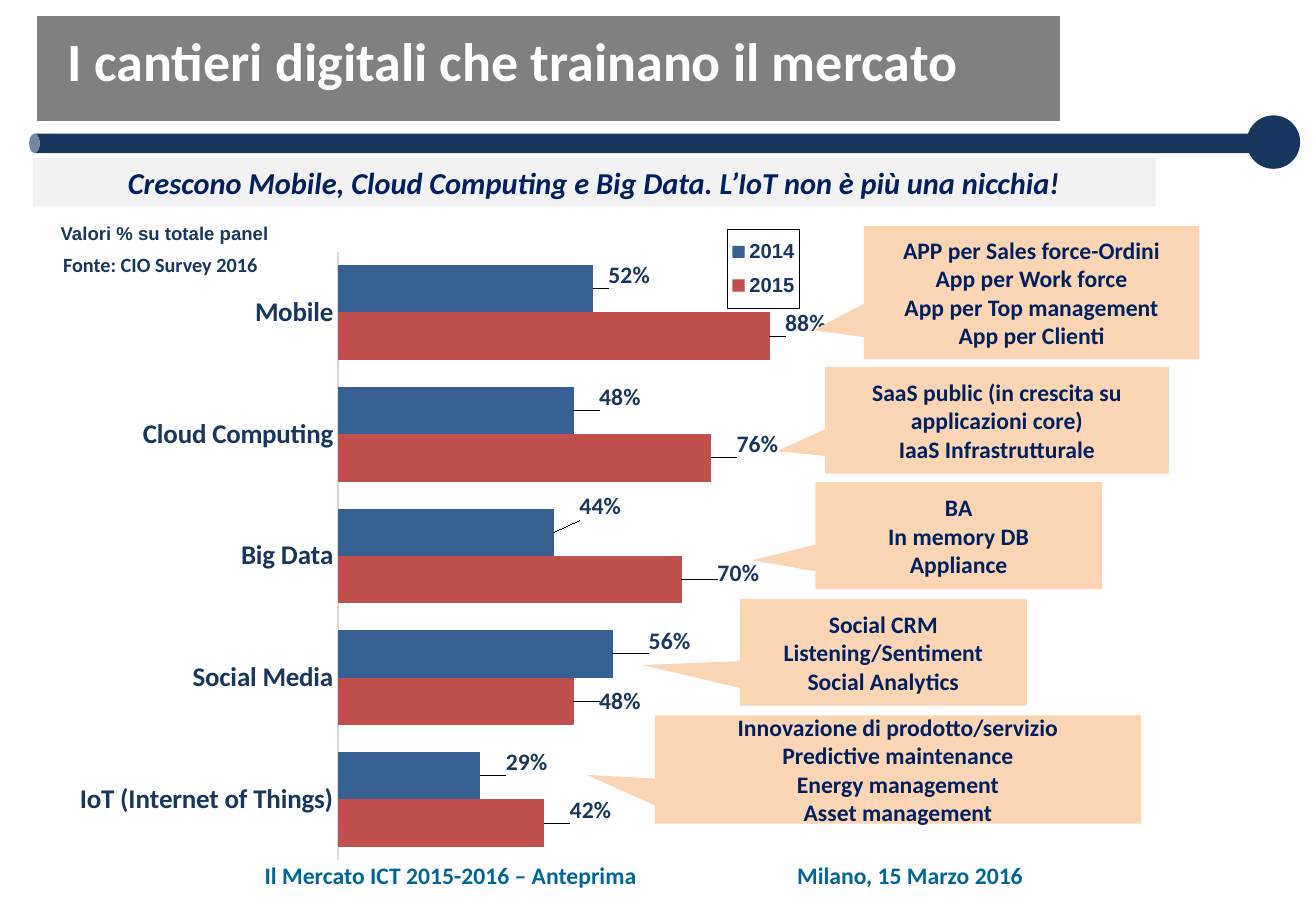
from lxml import etree
from pptx import Presentation
from pptx.chart.data import CategoryChartData
from pptx.dml.color import RGBColor
from pptx.enum import chart as ch, shapes, text
from pptx.oxml import parse_xml
from pptx.oxml.ns import nsdecls, qn
from pptx.util import Inches, Pt

C = {"navy": "17375E", "ink": "002060", "grey": "808080", "pale": "F2F2F2",
     "peach": "FCD5B5", "teal": "006699", "blue": "376092", "red": "C0504D",
     "axis": "D9D9D9", "white": "FFFFFF", "black": "000000"}
MSO, ALIGN = shapes.MSO_SHAPE, text.PP_ALIGN

prs = Presentation()
prs.slide_width, prs.slide_height = Inches(10.83), Inches(7.5)
s = prs.slides.add_slide(prs.slide_layouts[6])


def add_box(kind, at, fill=None, line=None):
    """Add a preset shape, or a text box when kind is None."""
    at = [Inches(v) for v in at]
    if kind is None:
        return s.shapes.add_textbox(*at)
    sp = s.shapes.add_shape(kind, *at)
    sp.shadow.inherit = False
    sp.fill.solid()
    sp.fill.fore_color.rgb = RGBColor.from_string(C[fill])
    if line:
        sp.line.color.rgb = RGBColor.from_string(C[line])
        sp.line.width = Pt(0.75)
    else:
        sp.line.fill.background()
    return sp


def write(sp, lines, size, color, font="Calibri", italic=None,
          align=ALIGN.CENTER, anchor=text.MSO_ANCHOR.TOP):
    tf = sp.text_frame
    tf.word_wrap = True
    tf.vertical_anchor = anchor
    for i, line in enumerate(lines):
        p = tf.add_paragraph() if i else tf.paragraphs[0]
        p.text, p.alignment = line, align
        p.font.size, p.font.name = Pt(size), font
        p.font.bold, p.font.italic = True, italic
        p.font.color.rgb = RGBColor.from_string(C[color])


# Header band and rule
bar = add_box(MSO.CAN, (5.21, -3.87, 0.16, 10.1), "navy")
bar.rotation = 270
bar.adjustments[0] = 0.55
add_box(MSO.RECTANGLE, (0.3, 0.13, 8.43, 0.87), "grey", "white")
add_box(MSO.OVAL, (10.26, 0.95, 0.44, 0.44), "navy")

# Footer
for at, line in [((1.88, 7.04, 3.66, 0.34), "Il Mercato ICT 2015-2016 – Anteprima"),
                 ((6.29, 7.04, 2.4, 0.34), "Milano, 15 Marzo 2016")]:
    write(add_box(None, at), [line], 14, "teal")

# Chart: values and label offsets (fractions of the chart) from bottom to top
SERIES = [
    ("2015", "red", (0.42, 0.48, 0.7, 0.76, 0.88),
     [(0.02, -0.02), (0.02, 0), (0.03, -0.01), (0.02, -0.02), (0.01, -0.02)]),
    ("2014", "blue", (0.29, 0.56, 0.44, 0.48, 0.52),
     [(0.02, -0.02), (0.03, -0.02), (0.02, -0.04), (0.02, -0.02), (0.01, -0.02)]),
]
data = CategoryChartData(number_format="0%")
data.categories = ["IoT (Internet of Things)", "Social Media", "Big Data",
                   "Cloud Computing", "Mobile"]
for name, _, values, _ in SERIES:
    data.add_series(name, values)
chart = s.shapes.add_chart(ch.XL_CHART_TYPE.BAR_CLUSTERED, Inches(-1.36), Inches(1.86),
                           Inches(8.54), Inches(5.43), data).chart
chart.has_title = False
chart.font.size, chart.font.name, chart.font.bold = Pt(12), "Arial", True
chart.font.color.rgb = RGBColor.from_string(C["navy"])

cat, val = chart.category_axis, chart.value_axis
cat.major_tick_mark = ch.XL_TICK_MARK.NONE
cat.tick_labels.font.size, cat.tick_labels.font.name = Pt(16), "Calibri"
cat.tick_labels.font.bold = True
cat.tick_labels.font.color.rgb = RGBColor.from_string(C["navy"])
cat.format.line.color.rgb = RGBColor.from_string(C["axis"])
cat.format.line.width = Pt(0.75)
val.minimum_scale, val.maximum_scale = 0, 1
val.has_major_gridlines = False
val.visible = False

plot = chart.plots[0]
plot.gap_width, plot.overlap, plot.vary_by_categories = 57, 0, False
for series, (_, color, _, offsets) in zip(plot.series, SERIES):
    series.format.fill.solid()
    series.format.fill.fore_color.rgb = RGBColor.from_string(C[color])
    labels = series.data_labels
    labels.show_value = True
    labels.number_format, labels.number_format_is_linked = "0%", False
    labels.position = ch.XL_LABEL_POSITION.OUTSIDE_END
    labels.font.size, labels.font.name, labels.font.bold = Pt(14), "Calibri", True
    labels.font.color.rgb = RGBColor.from_string(C["navy"])
    for i, (dx, dy) in enumerate(offsets):
        labels._element.insert(i, parse_xml(
            f'<c:dLbl {nsdecls("c")}><c:idx val="{i}"/><c:layout><c:manualLayout>'
            f'<c:x val="{dx}"/><c:y val="{dy}"/></c:manualLayout></c:layout>'
            '<c:dLblPos val="outEnd"/><c:showLegendKey val="0"/><c:showVal val="1"/>'
            '<c:showCatName val="0"/><c:showSerName val="0"/><c:showPercent val="0"/>'
            '<c:showBubbleSize val="0"/></c:dLbl>'))

# Fixed places for the plot area and the framed legend
chart.has_legend = True
chart.legend.position = ch.XL_LEGEND_POSITION.RIGHT
chart.legend.include_in_layout = False
legend = chart.legend._element
area = chart._chartSpace.find(".//" + qn("c:plotArea"))
for el, inner, place in [(area, True, (0.485, 0.039, 0.473, 0.923)),
                         (legend, False, (0.86, 0.005, 0.07, 0.12))]:
    for old in el.findall(qn("c:layout")):
        el.remove(old)
    layout = etree.Element(qn("c:layout"))
    manual = etree.SubElement(layout, qn("c:manualLayout"))
    items = [("layoutTarget", "inner")] if inner else []
    items += [("xMode", "edge"), ("yMode", "edge"), *zip("xywh", place)]
    for tag, value in items:
        etree.SubElement(manual, qn("c:" + tag)).set("val", str(value))
    el.insert(0 if inner else 1, layout)
legend.find(qn("c:overlay")).addnext(parse_xml(
    f'<c:spPr {nsdecls("c", "a")}><a:solidFill><a:srgbClr val="{C["white"]}"/></a:solidFill>'
    f'<a:ln w="9525"><a:solidFill><a:srgbClr val="{C["black"]}"/></a:solidFill></a:ln></c:spPr>'))

# Title, subtitle and notes on the data
title = add_box(None, (0.46, 0.36, 10.39, 0.63))
write(title, ["I cantieri digitali che trainano il mercato"], 32, "white", align=ALIGN.LEFT)
title.text_frame.paragraphs[0].line_spacing = Pt(25)
write(add_box(None, (0.33, 1.78, 2.05, 0.29)), ["Valori % su totale panel"], 11, "navy", "Arial")
write(add_box(MSO.RECTANGLE, (0.27, 1.3, 9.24, 0.4), "pale"),
      ["Crescono Mobile, Cloud Computing e Big Data. L’IoT non è più una nicchia!"],
      18, "ink", italic=True)
write(add_box(None, (0.06, 2.03, 2.52, 0.3)), ["Fonte: CIO Survey 2016"], 12, "navy")

# Callouts: place, pointer tip, lines
CALLOUTS = [
    ((7.11, 1.86, 2.76, 1.1), (-0.65, 0.28),
     ["APP per Sales force-Ordini", "App per Work force",
      "App per Top management", "App per Clienti"]),
    ((5.39, 5.89, 4, 0.89), (-0.64, 0.05),
     ["Innovazione di prodotto/servizio", "Predictive maintenance",
      "Energy management", "Asset management"]),
    ((6.09, 4.93, 2.36, 0.88), (-0.84, 0.12),
     ["Social CRM", "Listening/Sentiment", "Social Analytics"]),
    ((6.71, 3.97, 2.36, 0.88), (-0.72, 0.23), ["BA", "In memory DB", "Appliance"]),
    ((6.79, 3.02, 2.83, 0.88), (-0.64, 0.29),
     ["SaaS public (in crescita su applicazioni core)", "IaaS Infrastrutturale"]),
]
for at, tip, lines in CALLOUTS:
    sp = add_box(MSO.RECTANGULAR_CALLOUT, at, "peach")
    sp.adjustments[0], sp.adjustments[1] = tip
    write(sp, lines, 14, "ink", anchor=text.MSO_ANCHOR.MIDDLE)

prs.save("out.pptx")
